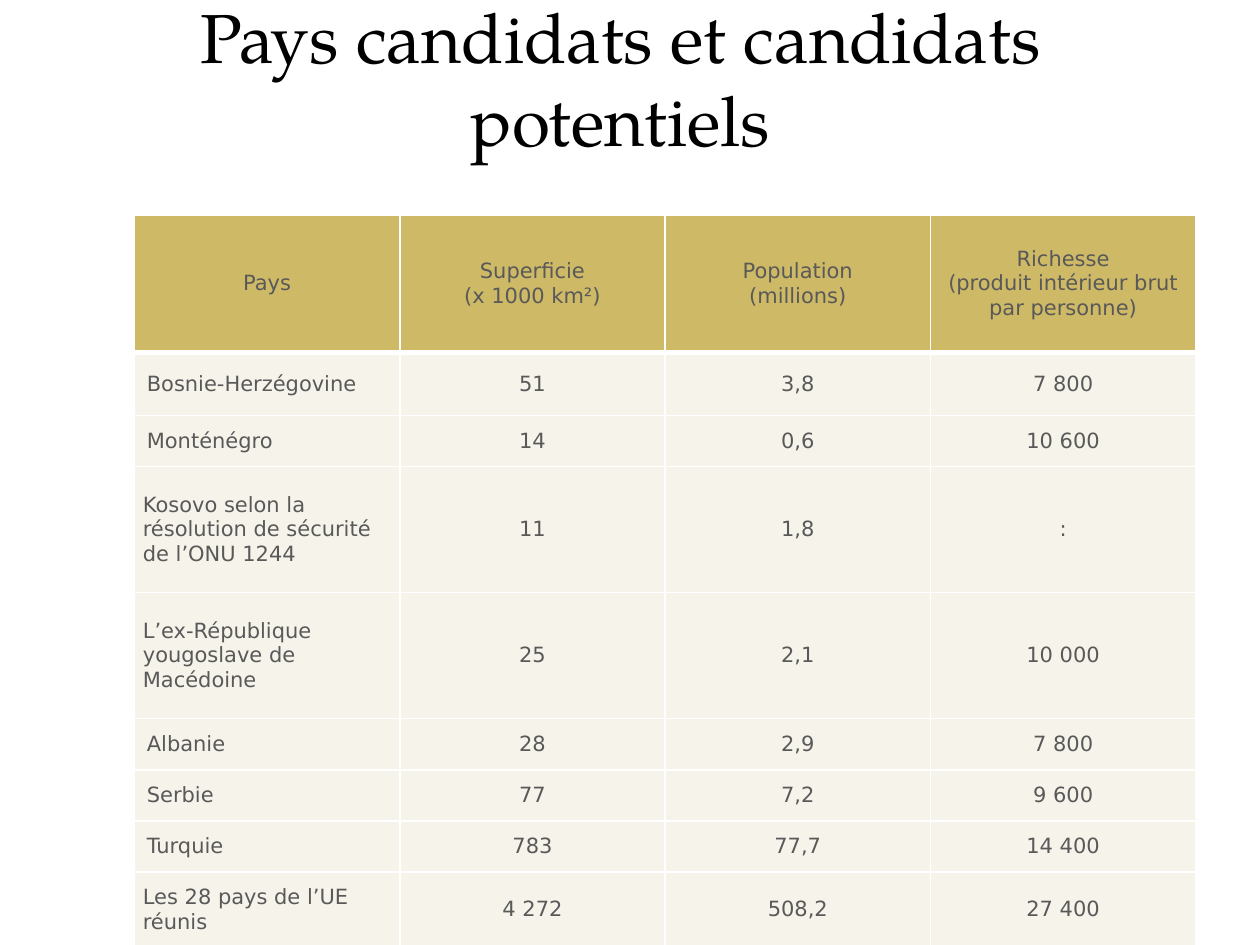
from lxml import etree
from pptx import Presentation
from pptx.dml.color import RGBColor
from pptx.enum import text
from pptx.oxml import ns
from pptx.util import Cm, Pt

COLOURS = {
    "title": "000000",
    "body": "595959",
    "header": "CEB966",
    "row": "F6F3EA",
    "rule": "FFFFFF",
}
TITLE_FONT = "TeX Gyre Pagella"
TABLE_FONT = "DejaVu Sans"

HEADINGS = [
    "Pays",
    "Superficie\n(x 1000 km²)",
    "Population\n(millions)",
    "Richesse\n(produit intérieur brut par personne)",
]
COUNTRIES = [
    ("Bosnie-Herzégovine", "51", "3,8", "7 800"),
    ("Monténégro", "14", "0,6", "10 600"),
    ("Kosovo selon la résolution de sécurité de l’ONU 1244", "11", "1,8", ":"),
    ("L’ex-République yougoslave de Macédoine", "25", "2,1", "10 000"),
    ("Albanie", "28", "2,9", "7 800"),
    ("Serbie", "77", "7,2", "9 600"),
    ("Turquie", "783", "77,7", "14 400"),
    ("Les 28 pays de l’UE réunis", "4 272", "508,2", "27 400"),
]
ROW_HEIGHTS = [2.78, 1.27, 1.03, 2.54, 2.54, 1.03, 1.03, 1.03, 1.52]
COLUMN_WIDTH = 5.35
LONG_NAME = 20


def write_text(frame, wording, font, size, colour, align=text.PP_ALIGN.CENTER):
    frame.text = wording
    for paragraph in frame.paragraphs:
        paragraph.alignment = align
        for run in paragraph.runs:
            run.font.name = font
            run.font.size = Pt(size)
            run.font.bold = False
            run.font.color.rgb = RGBColor.from_string(COLOURS[colour])


def add_title(slide, wording):
    title = slide.shapes.title
    title.left, title.top = Cm(1.57), Cm(0)
    title.width, title.height = Cm(21.87), Cm(3.12)
    frame = title.text_frame
    frame.word_wrap = True
    frame.auto_size = text.MSO_AUTO_SIZE.NONE
    frame.vertical_anchor = text.MSO_ANCHOR.MIDDLE
    write_text(frame, wording, TITLE_FONT, 39.6, "title")


def rule_header_cell(cell):
    properties = cell._tc.get_or_add_tcPr()
    for position, (side, width) in enumerate([("L", 1), ("R", 1), ("T", 1), ("B", 3)]):
        line = etree.Element(ns.qn(f"a:ln{side}"), w=str(Pt(width)))
        fill = etree.SubElement(line, ns.qn("a:solidFill"))
        etree.SubElement(fill, ns.qn("a:srgbClr"), val=COLOURS["rule"])
        properties.insert(position, line)


def format_cell(cell, wording, fill, align=text.PP_ALIGN.CENTER, tight=False):
    cell.vertical_anchor = text.MSO_ANCHOR.MIDDLE
    cell.margin_left = cell.margin_right = Cm(0.17 if tight else 0.25)
    cell.margin_top = cell.margin_bottom = Cm(0 if tight else 0.13)
    cell.fill.solid()
    cell.fill.fore_color.rgb = RGBColor.from_string(COLOURS[fill])
    write_text(cell.text_frame, wording, TABLE_FONT, 12, "body", align)


def add_country_table(slide):
    table = slide.shapes.add_table(
        len(ROW_HEIGHTS), len(HEADINGS), Cm(2.71), Cm(4.33),
        Cm(COLUMN_WIDTH * len(HEADINGS)), Cm(sum(ROW_HEIGHTS)),
    ).table
    for column in table.columns:
        column.width = Cm(COLUMN_WIDTH)
    for row, height in zip(table.rows, ROW_HEIGHTS):
        row.height = Cm(height)
    for cell, heading in zip(table.rows[0].cells, HEADINGS):
        format_cell(cell, heading, "header")
        rule_header_cell(cell)
    for index, (country, *figures) in enumerate(COUNTRIES, start=1):
        name_cell, *figure_cells = table.rows[index].cells
        format_cell(name_cell, country, "row", text.PP_ALIGN.LEFT, len(country) > LONG_NAME)
        for cell, figure in zip(figure_cells, figures):
            format_cell(cell, figure, "row")


def main():
    deck = Presentation()
    deck.slide_width, deck.slide_height = Cm(25.4), Cm(19.05)
    slide = deck.slides.add_slide(deck.slide_layouts[5])
    add_title(slide, "Pays candidats et candidats potentiels")
    add_country_table(slide)
    deck.save("out.pptx")


if __name__ == "__main__":
    main()
